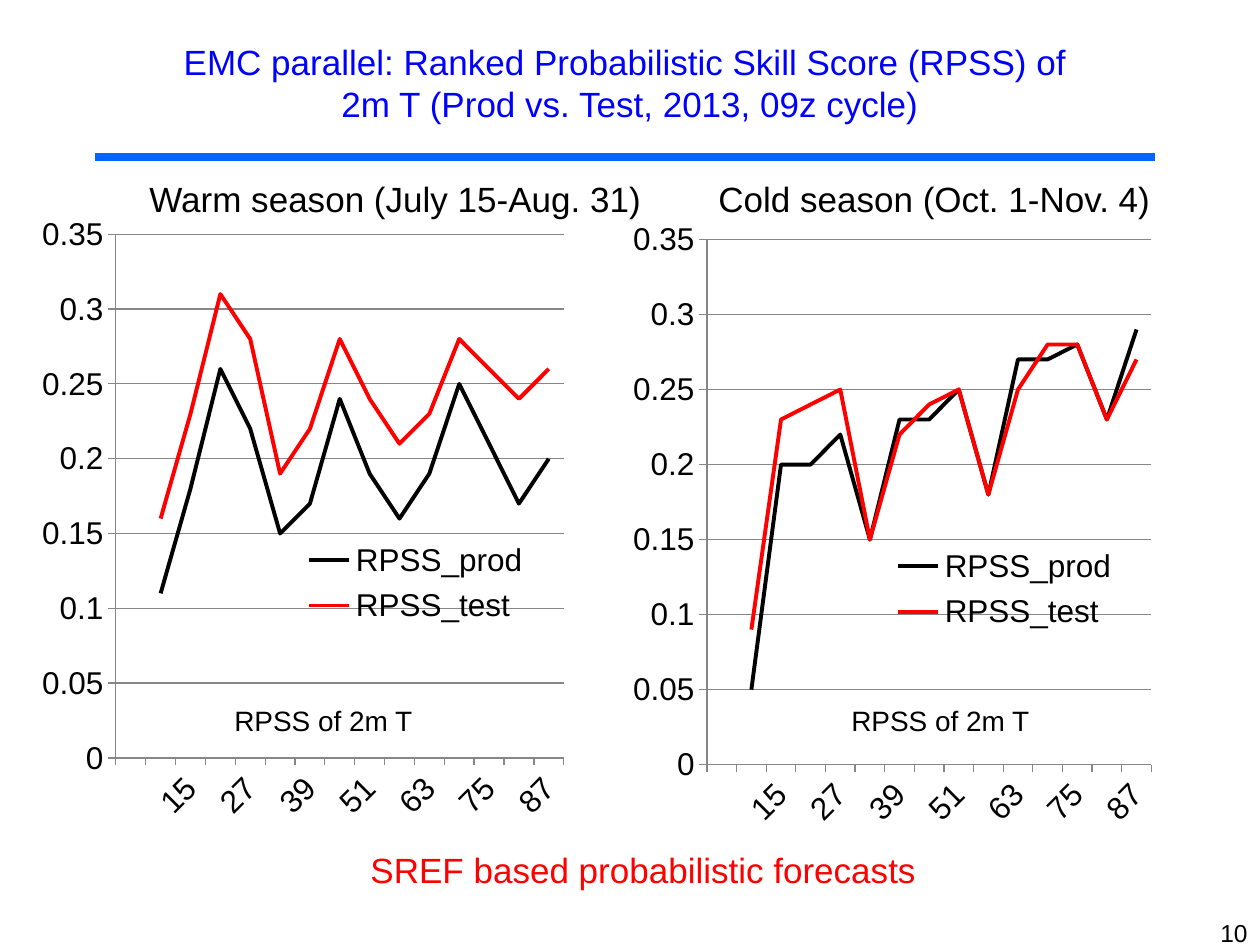
from dataclasses import dataclass

from lxml.etree import SubElement
from pptx import Presentation
from pptx.chart.data import CategoryChartData
from pptx.dml.color import RGBColor
from pptx.enum.chart import XL_CHART_TYPE, XL_LEGEND_POSITION, XL_TICK_MARK
from pptx.enum.text import MSO_ANCHOR, PP_ALIGN
from pptx.oxml import parse_xml
from pptx.oxml.ns import nsdecls, qn
from pptx.util import Emu, Pt

PX_PER_INCH = 126


def px(length):
    return Emu(round(length * 914400 / PX_PER_INCH))


@dataclass(frozen=True)
class Theme:
    font: str = "Arial"
    black: RGBColor = RGBColor(0, 0, 0)
    red: RGBColor = RGBColor(0xFF, 0, 0)
    title: RGBColor = RGBColor(0, 0, 0xFF)
    rule: RGBColor = RGBColor(0, 0x66, 0xFF)
    grid: RGBColor = RGBColor(0x86, 0x86, 0x86)
    heading_size: Pt = Pt(20)
    chart_size: Pt = Pt(18)
    label_size: Pt = Pt(16)
    number_size: Pt = Pt(14)
    rule_width: Pt = Pt(4.5)
    series_width: Pt = Pt(2.25)
    grid_width: Pt = Pt(0.75)


def layout_xml(x, y, width, height, inner=False):
    """Manual chart layout, in fractions of the chart frame."""
    target = '<c:layoutTarget val="inner"/>' if inner else ""
    return parse_xml(
        f'<c:layout {nsdecls("c")}><c:manualLayout>{target}'
        '<c:xMode val="edge"/><c:yMode val="edge"/>'
        f'<c:x val="{x}"/><c:y val="{y}"/><c:w val="{width}"/><c:h val="{height}"/>'
        "</c:manualLayout></c:layout>"
    )


class SlideBuilder:
    def __init__(self, page, theme):
        self.page = page
        self.theme = theme

    def rule(self, left, right, y):
        line = self.page.shapes.add_connector(1, px(left), px(y), px(right), px(y))
        line.line.color.rgb = self.theme.rule
        line.line.width = self.theme.rule_width
        SubElement(line._element.spPr, qn("a:effectLst"))

    def text(self, words, at, size, color=None, align=PP_ALIGN.LEFT,
             anchor=MSO_ANCHOR.TOP, wrap=True, tab=None):
        box = self.page.shapes.add_textbox(*map(px, at))
        frame = box.text_frame
        frame.word_wrap = wrap
        frame.vertical_anchor = anchor
        para = frame.paragraphs[0]
        para.text = words
        para.alignment = align
        if tab:
            tabs = SubElement(para._p.get_or_add_pPr(), qn("a:tabLst"))
            SubElement(tabs, qn("a:tab"), pos=str(px(tab)), algn="l")
        para.font.name = self.theme.font
        para.font.size = size
        para.font.color.rgb = color or self.theme.black

    def score_chart(self, at, categories, scores):
        data = CategoryChartData()
        data.categories = categories
        for name, values in scores.items():
            data.add_series(name, values)
        chart = self.page.shapes.add_chart(
            XL_CHART_TYPE.LINE, *map(px, at), data).chart
        chart.has_title = False
        chart.font.name = self.theme.font
        chart.font.size = self.theme.chart_size
        chart.font.color.rgb = self.theme.black
        chart._chartSpace.chart.addnext(parse_xml(
            f'<c:spPr {nsdecls("c", "a")}><a:noFill/><a:ln><a:noFill/></a:ln></c:spPr>'))

        plot_area = chart._chartSpace.chart.plotArea
        for old in plot_area.findall(qn("c:layout")):
            plot_area.remove(old)
        plot_area.insert(0, layout_xml(0.181, 0.081, 0.7, 0.767, inner=True))

        for series, color in zip(chart.plots[0].series,
                                 (self.theme.black, self.theme.red)):
            series.smooth = False
            series.format.line.color.rgb = color
            series.format.line.width = self.theme.series_width

        self.style_axes(chart.category_axis, chart.value_axis)
        chart.has_legend = True
        chart.legend.position = XL_LEGEND_POSITION.RIGHT
        chart.legend.include_in_layout = False
        legend = chart.legend._element
        for old in legend.findall(qn("c:layout")):
            legend.remove(old)
        legend.find(qn("c:legendPos")).addnext(layout_xml(0.47, 0.518, 0.36, 0.147))

    def style_axes(self, hours, score):
        score.minimum_scale, score.maximum_scale, score.major_unit = 0, 0.35, 0.05
        score.has_major_gridlines = True
        hours.has_major_gridlines = False
        for part in (hours, score, score.major_gridlines):
            part.format.line.color.rgb = self.theme.grid
            part.format.line.width = self.theme.grid_width
        for axis in (hours, score):
            axis.major_tick_mark = XL_TICK_MARK.OUTSIDE
            axis.minor_tick_mark = XL_TICK_MARK.NONE
            axis.tick_labels.font.size = self.theme.chart_size
        element = hours._element
        element.find(qn("c:txPr")).find(qn("a:bodyPr")).set("rot", "-2700000")
        last = element.find(qn("c:noMultiLvlLbl"))
        for tag, step in (("tickLblSkip", 2), ("tickMarkSkip", 1)):
            last.addprevious(parse_xml(f'<c:{tag} {nsdecls("c")} val="{step}"/>'))


FORECAST_HOURS = [""] + [str(hour) for hour in range(9, 88, 6)]
WARM_SCORES = {
    "RPSS_prod": [None, 0.11, 0.18, 0.26, 0.22, 0.15, 0.17, 0.24,
                  0.19, 0.16, 0.19, 0.25, 0.21, 0.17, 0.2],
    "RPSS_test": [None, 0.16, 0.23, 0.31, 0.28, 0.19, 0.22, 0.28,
                  0.24, 0.21, 0.23, 0.28, 0.26, 0.24, 0.26],
}
COLD_SCORES = {
    "RPSS_prod": [None, 0.05, 0.2, 0.2, 0.22, 0.15, 0.23, 0.23,
                  0.25, 0.18, 0.27, 0.27, 0.28, 0.23, 0.29],
    "RPSS_test": [None, 0.09, 0.23, 0.24, 0.25, 0.15, 0.22, 0.24,
                  0.25, 0.18, 0.25, 0.28, 0.28, 0.23, 0.27],
}


def main():
    deck = Presentation()
    deck.slide_width, deck.slide_height = px(1260), px(945)
    theme = Theme()
    slide = SlideBuilder(deck.slides.add_slide(deck.slide_layouts[6]), theme)

    slide.rule(95, 1155, 157)
    slide.text("EMC parallel: Ranked Probabilistic Skill Score (RPSS) of \v"
               "2m T (Prod vs. Test, 2013, 09z cycle)",
               (63, 3, 1134, 158), theme.heading_size, theme.title,
               PP_ALIGN.CENTER, MSO_ANCHOR.MIDDLE)
    slide.score_chart((0, 179, 640, 683), FORECAST_HOURS, WARM_SCORES)
    slide.text("10", (966, 912, 294, 33), theme.number_size, align=PP_ALIGN.RIGHT)
    for left in (222, 839):
        slide.text("RPSS of 2m T", (left, 697, 213, 47), theme.label_size, wrap=False)
    slide.text("SREF based probabilistic forecasts", (358, 842, 576, 55),
               theme.heading_size, theme.red, wrap=False)
    slide.score_chart((592, 184, 635, 685), FORECAST_HOURS, COLD_SCORES)
    slide.text("Warm season (July 15-Aug. 31)\tCold season (Oct. 1-Nov. 4)",
               (137, 171, 1032, 55), theme.heading_size, tab=569)

    deck.save("out.pptx")


if __name__ == "__main__":
    main()
